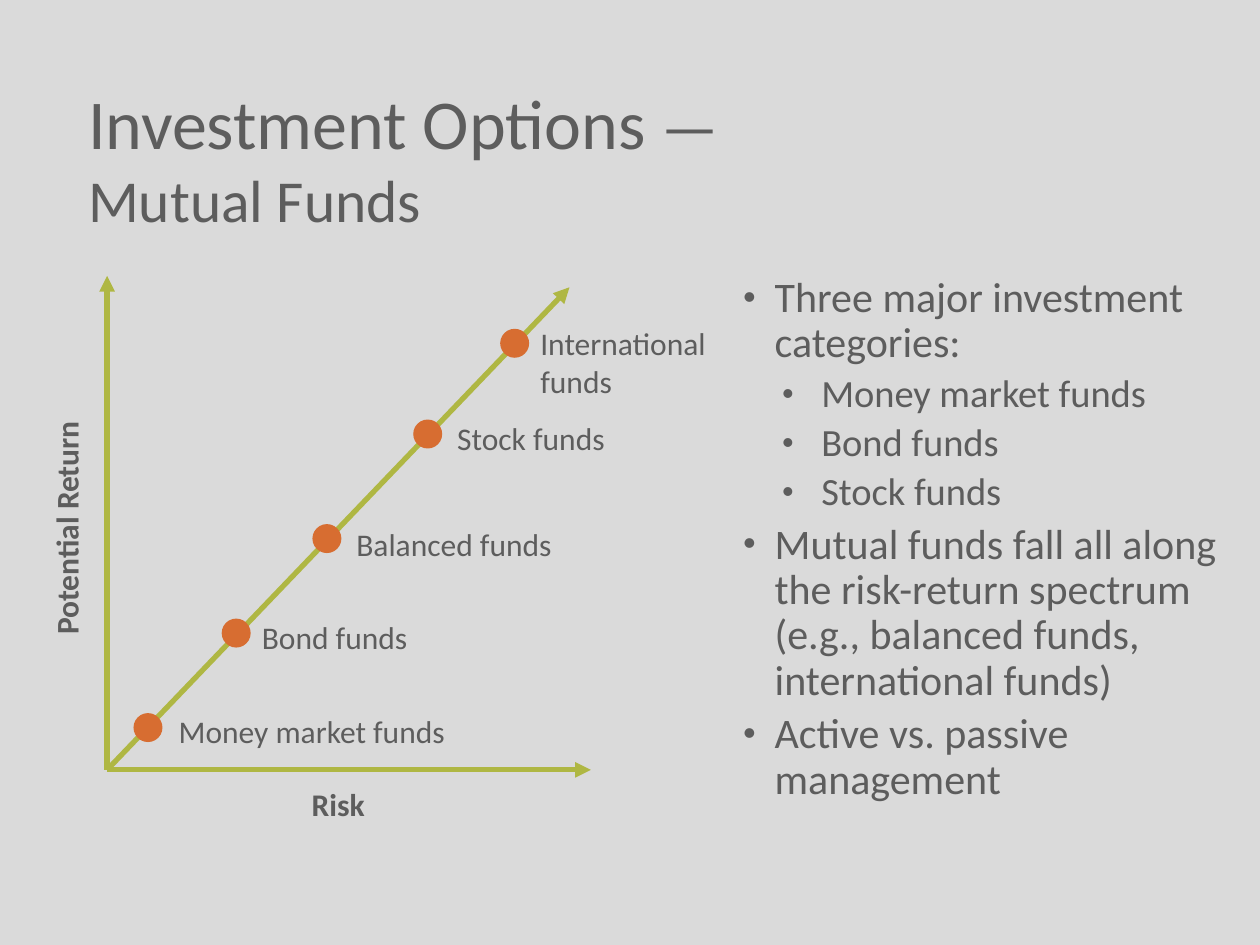
from lxml.etree import SubElement
from pptx import Presentation
from pptx.dml.color import RGBColor
from pptx.enum.shapes import MSO_CONNECTOR as CONN, MSO_SHAPE as SHAPE
from pptx.enum.text import MSO_ANCHOR as ANCHOR, PP_ALIGN as ALIGN
from pptx.oxml.ns import qn
from pptx.util import Inches, Pt

COLORS = {"bg": "DADADA", "text": "5D5D5D", "axis": "AFB743", "dot": "D76D31"}
FONT = "Calibri"
TITLE = [[("Investment Options ", 40), ("—", 36)], [("Mutual Funds", 34)]]
BULLETS = [
    (0, "Three major investment categories:"),
    (1, "Money market funds"),
    (1, "Bond funds"),
    (1, "Stock funds"),
    (0, "Mutual funds fall all along the risk-return spectrum "
        "(e.g., balanced funds, international funds)"),
    (0, "Active vs. passive management"),
]
LEVELS = [(24, 0.25, -0.25), (22, 0.62, -0.31)]
FUNDS = [
    ("Money market funds", 1.06, 5.66, 1.32, 5.6, 3, 0.4),
    ("Bond funds", 1.76, 4.91, 1.98, 4.86, 2.08, 0.4),
    ("Balanced funds", 2.48, 4.16, 2.73, 4.12, 2.17, 0.4),
    ("Stock funds", 3.28, 3.33, 3.53, 3.28, 1.83, 0.4),
    ("International funds", 3.97, 2.61, 4.19, 2.52, 1.75, 0.71),
]
AXIS_LABELS = [
    ("Risk", (0.85, 6.18, 3.67, 0.4), 0),
    ("Potential Return", (-1.39, 3.99, 3.83, 0.4), 270),
]
ORIGIN = (0.85, 6.11)
ARROW_ENDS = [(4.69, 6.11), (0.85, 2.19), (4.52, 2.28)]
DOT = 0.23


def rgb(name):
    return RGBColor.from_string(COLORS[name])


def add_text(p, text, size=18, bold=False):
    r = p.add_run()
    r.text = text
    r.font.name, r.font.size, r.font.bold = FONT, Pt(size), bold
    r.font.color.rgb = rgb("text")


def add_box(s, box):
    sp = s.shapes.add_textbox(*map(Inches, box))
    sp.text_frame.word_wrap = True
    return sp


def add_title(s):
    sp = s.shapes.title
    sp.left, sp.top, sp.width, sp.height = map(Inches, (0.6, 0.58, 7.99, 1.33))
    sp.text_frame.vertical_anchor = ANCHOR.MIDDLE
    p = sp.text_frame.paragraphs[0]
    p.alignment = ALIGN.LEFT
    for i, line in enumerate(TITLE):
        if i:
            p.add_line_break()
        for text, size in line:
            add_text(p, text, size=size)


def add_bullets(s):
    tf = add_box(s, (5.8, 2.14, 4.17, 4.95)).text_frame
    for i, (level, text) in enumerate(BULLETS):
        size, margin, indent = LEVELS[level]
        p = tf.add_paragraph() if i else tf.paragraphs[0]
        p.level = level
        p.line_spacing = 0.9
        p.space_before = Pt(0.2 * size if i else 0)
        pPr = p._p.get_or_add_pPr()
        pPr.set("marL", str(Inches(margin)))
        pPr.set("indent", str(Inches(indent)))
        color = SubElement(pPr, qn("a:buClr"))
        SubElement(color, qn("a:srgbClr"), val=COLORS["text"])
        SubElement(pPr, qn("a:buSzPct"), val="50000")
        SubElement(pPr, qn("a:buFont"), typeface=FONT)
        SubElement(pPr, qn("a:buChar"), char="●")
        add_text(p, text, size=size)


def add_arrow(s, end):
    c = s.shapes.add_connector(CONN.STRAIGHT, *map(Inches, ORIGIN + end))
    c.line.color.rgb = rgb("axis")
    c.line.width = Pt(3)
    SubElement(c.line._get_or_add_ln(), qn("a:tailEnd"), type="triangle")
    SubElement(c._element.spPr, qn("a:effectLst"))


def add_fund(s, name, x, y, *box):
    dot = s.shapes.add_shape(SHAPE.OVAL, *map(Inches, (x, y, DOT, DOT)))
    dot.shadow.inherit = False
    dot.fill.solid()
    dot.fill.fore_color.rgb = rgb("dot")
    dot.line.fill.background()
    add_text(add_box(s, box).text_frame.paragraphs[0], name)


def main():
    prs = Presentation()
    prs.slide_width, prs.slide_height = Inches(10), Inches(7.5)
    s = prs.slides.add_slide(prs.slide_layouts[5])
    s.background.fill.solid()
    s.background.fill.fore_color.rgb = rgb("bg")
    add_title(s)
    add_bullets(s)
    for end in ARROW_ENDS:
        add_arrow(s, end)
    for text, box, rotation in AXIS_LABELS:
        sp = add_box(s, box)
        sp.rotation = rotation
        p = sp.text_frame.paragraphs[0]
        p.alignment = ALIGN.CENTER
        add_text(p, text, bold=True)
    for fund in FUNDS:
        add_fund(s, *fund)
    prs.save("out.pptx")


if __name__ == "__main__":
    main()
